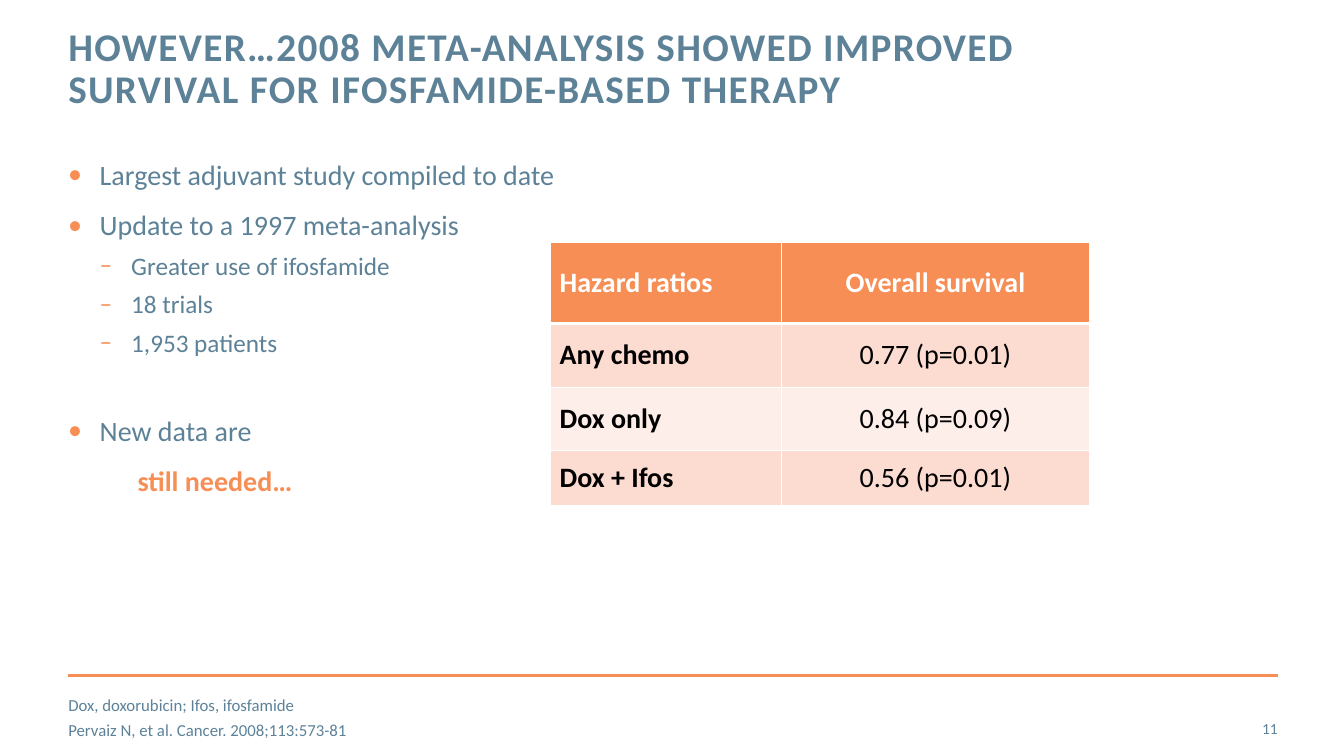
"""Build the slide on the 2008 ifosfamide meta-analysis with its hazard ratio table."""
from dataclasses import dataclass
from typing import Any, Optional

import lxml.etree
import pptx
import pptx.dml.color
import pptx.enum.shapes
import pptx.enum.text
import pptx.oxml.ns
import pptx.util

PX = 9525
FONT = "Calibri"
COLOURS = {
    "slate": "5D8298",
    "orange": "F78E56",
    "peach": "FCDBD1",
    "blush": "FDEEE9",
    "white": "FFFFFF",
    "black": "000000",
}
ALIGN = pptx.enum.text.PP_ALIGN
ANCHOR = pptx.enum.text.MSO_ANCHOR
Pt = pptx.util.Pt


@dataclass(frozen=True)
class Line:
    text: str
    size: int
    colour: str = "slate"
    bold: bool = False
    before: int = 0
    leading: Optional[int] = None
    align: Any = ALIGN.LEFT
    level: int = 0
    bullet: str = ""
    margin: int = 0
    spacing: int = 0


@dataclass(frozen=True)
class Block:
    left: int
    top: int
    width: int
    height: int
    lines: tuple[Line, ...]
    anchor: Any = ANCHOR.TOP


def point(text: str, before: int = 12) -> Line:
    return Line(text, 20, before=before, bullet="•", margin=30)


def subpoint(text: str) -> Line:
    return Line(text, 18, before=6, level=1, bullet="–", margin=60)


BLOCKS = (
    Block(65, 26, 918, 84, (
        Line("HOWEVER…2008 META-ANALYSIS SHOWED IMPROVED SURVIVAL FOR "
             "IFOSFAMIDE-BASED THERAPY", 28, bold=True, leading=30, spacing=100),
    )),
    Block(65, 150, 1151, 475, (
        point("Largest adjuvant study compiled to date", before=0),
        point("Update to a 1997 meta-analysis"),
        subpoint("Greater use of ifosfamide"),
        subpoint("18 trials"),
        subpoint("1,953 patients"),
        point("New data are", before=40),
        Line("still needed…", 20, "orange", bold=True, before=12, margin=66),
    )),
    Block(65, 664, 852, 38, (
        Line("Dox, doxorubicin; Ifos, ifosfamide", 12),
        Line("Pervaiz N, et al. Cancer. 2008;113:573-81", 12, before=3),
    ), ANCHOR.MIDDLE),
    Block(1134, 675, 83, 38, (Line("11", 11, align=ALIGN.RIGHT),), ANCHOR.MIDDLE),
)
HAZARD_RATIOS = (
    ("Hazard ratios", "Overall survival"),
    ("Any chemo", "0.77 (p=0.01)"),
    ("Dox only", "0.84 (p=0.09)"),
    ("Dox + Ifos", "0.56 (p=0.01)"),
)
ROW_FILLS = ("orange", "peach", "blush", "peach")
ROW_HEIGHTS = (77, 61, 60, 53)
COLUMN_WIDTHS = (220, 294)


def rgb(name: str) -> pptx.dml.color.RGBColor:
    return pptx.dml.color.RGBColor.from_string(COLOURS[name])


def apply(target: Any, values: dict[str, Any]) -> None:
    for attribute, value in values.items():
        setattr(target, attribute, value)


def add_child(parent: Any, tag: str, **attributes: str) -> Any:
    return lxml.etree.SubElement(parent, pptx.oxml.ns.qn(tag), attributes)


def write_line(paragraph: Any, line: Line) -> None:
    properties = paragraph._p.get_or_add_pPr()
    if line.margin:
        properties.set("marL", str(line.margin * PX))
    if line.bullet:
        properties.set("indent", str(-30 * PX))
        add_child(add_child(properties, "a:buClr"), "a:srgbClr", val=COLOURS["orange"])
        add_child(properties, "a:buFont", typeface=FONT)
        add_child(properties, "a:buChar", char=line.bullet)
    apply(paragraph, {
        "alignment": line.align,
        "level": line.level,
        "space_before": Pt(line.before),
        "line_spacing": Pt(line.leading) if line.leading else None,
    })
    run = paragraph.add_run()
    run.text = line.text
    apply(run.font, {"name": FONT, "size": Pt(line.size), "bold": line.bold})
    run.font.color.rgb = rgb(line.colour)
    if line.spacing:
        run._r.get_or_add_rPr().set("spc", str(line.spacing))


def add_block(slide: Any, block: Block) -> None:
    box = slide.shapes.add_textbox(
        block.left * PX, block.top * PX, block.width * PX, block.height * PX)
    frame = box.text_frame
    apply(frame, {
        "word_wrap": True,
        "vertical_anchor": block.anchor,
        "margin_left": 0,
        "margin_top": 0,
        "margin_right": 0,
        "margin_bottom": 0,
    })
    for index, line in enumerate(block.lines):
        write_line(frame.add_paragraph() if index else frame.paragraphs[0], line)


def add_borders(cell: Any, row: int) -> None:
    widths = {"L": 1, "R": 1, "T": 3 if row == 1 else 1, "B": 3 if row == 0 else 1}
    properties = cell._tc.get_or_add_tcPr()
    for side, width in widths.items():
        border = add_child(properties, f"a:ln{side}", w=str(Pt(width)))
        add_child(add_child(border, "a:solidFill"), "a:srgbClr", val=COLOURS["white"])


def add_hazard_table(slide: Any) -> None:
    table = slide.shapes.add_table(
        len(ROW_HEIGHTS), len(COLUMN_WIDTHS), 524 * PX, 231 * PX,
        sum(COLUMN_WIDTHS) * PX, sum(ROW_HEIGHTS) * PX).table
    for column, width in zip(table.columns, COLUMN_WIDTHS):
        column.width = width * PX
    for row, height in enumerate(ROW_HEIGHTS):
        table.rows[row].height = height * PX
        for column, text in enumerate(HAZARD_RATIOS[row]):
            cell = table.cell(row, column)
            add_borders(cell, row)
            cell.fill.solid()
            cell.fill.fore_color.rgb = rgb(ROW_FILLS[row])
            apply(cell, {
                "vertical_anchor": ANCHOR.MIDDLE,
                "margin_left": 9 * PX,
                "margin_right": 9 * PX,
                "margin_top": 4 * PX,
                "margin_bottom": 4 * PX,
            })
            write_line(cell.text_frame.paragraphs[0], Line(
                text, 20, "black" if row else "white",
                bold=row == 0 or column == 0,
                align=ALIGN.CENTER if column else ALIGN.LEFT))


def add_footer_rule(slide: Any) -> None:
    rule = slide.shapes.add_connector(
        pptx.enum.shapes.MSO_CONNECTOR.STRAIGHT, 65 * PX, 643 * PX, 1217 * PX, 643 * PX)
    rule.line.color.rgb = rgb("orange")
    rule.line.width = Pt(2)
    add_child(rule._element.spPr, "a:effectLst")


def main() -> None:
    deck = pptx.Presentation()
    apply(deck, {"slide_width": 1280 * PX, "slide_height": 720 * PX})
    slide = deck.slides.add_slide(deck.slide_layouts[6])
    add_footer_rule(slide)
    for block in BLOCKS:
        add_block(slide, block)
    add_hazard_table(slide)
    deck.save("out.pptx")


if __name__ == "__main__":
    main()
